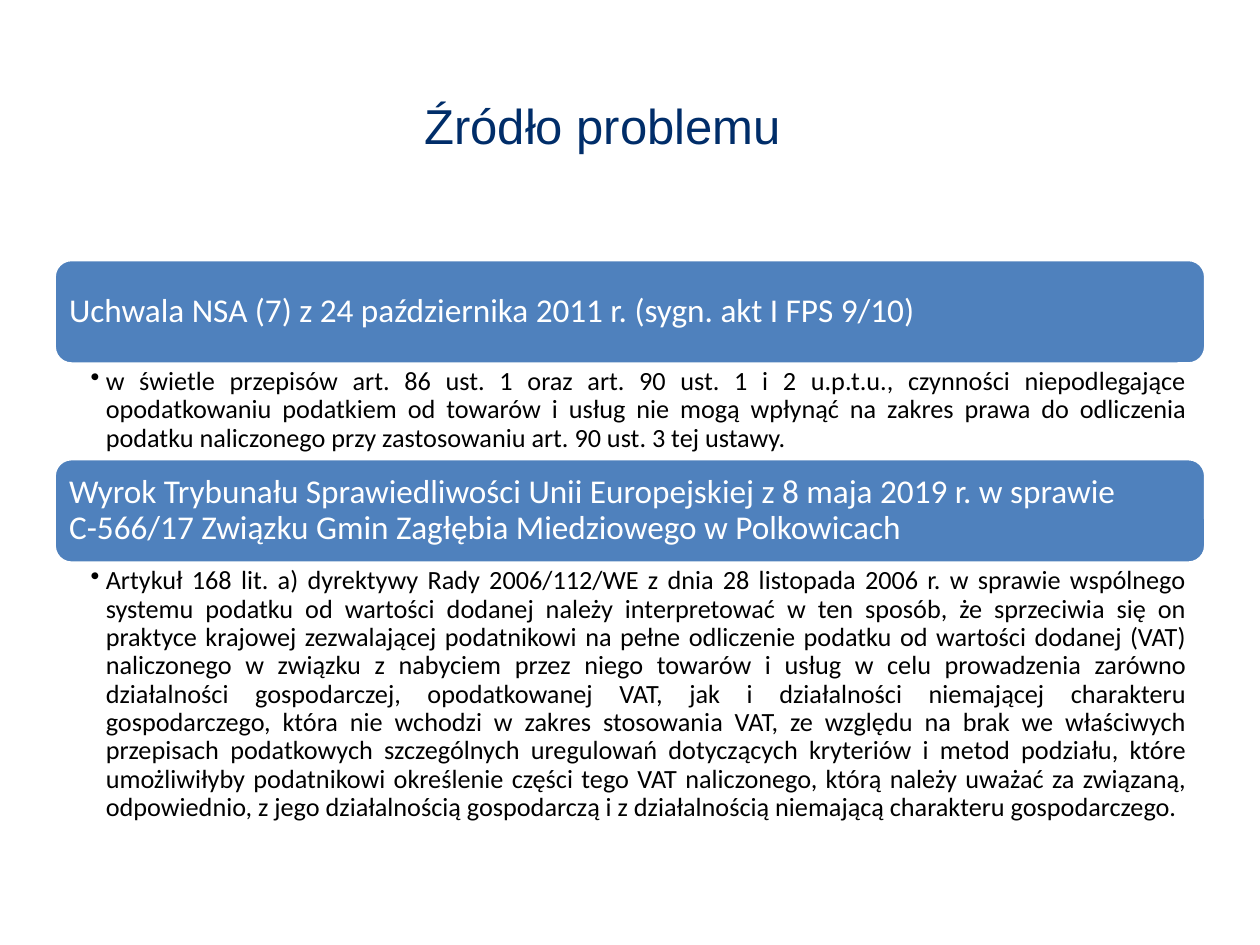
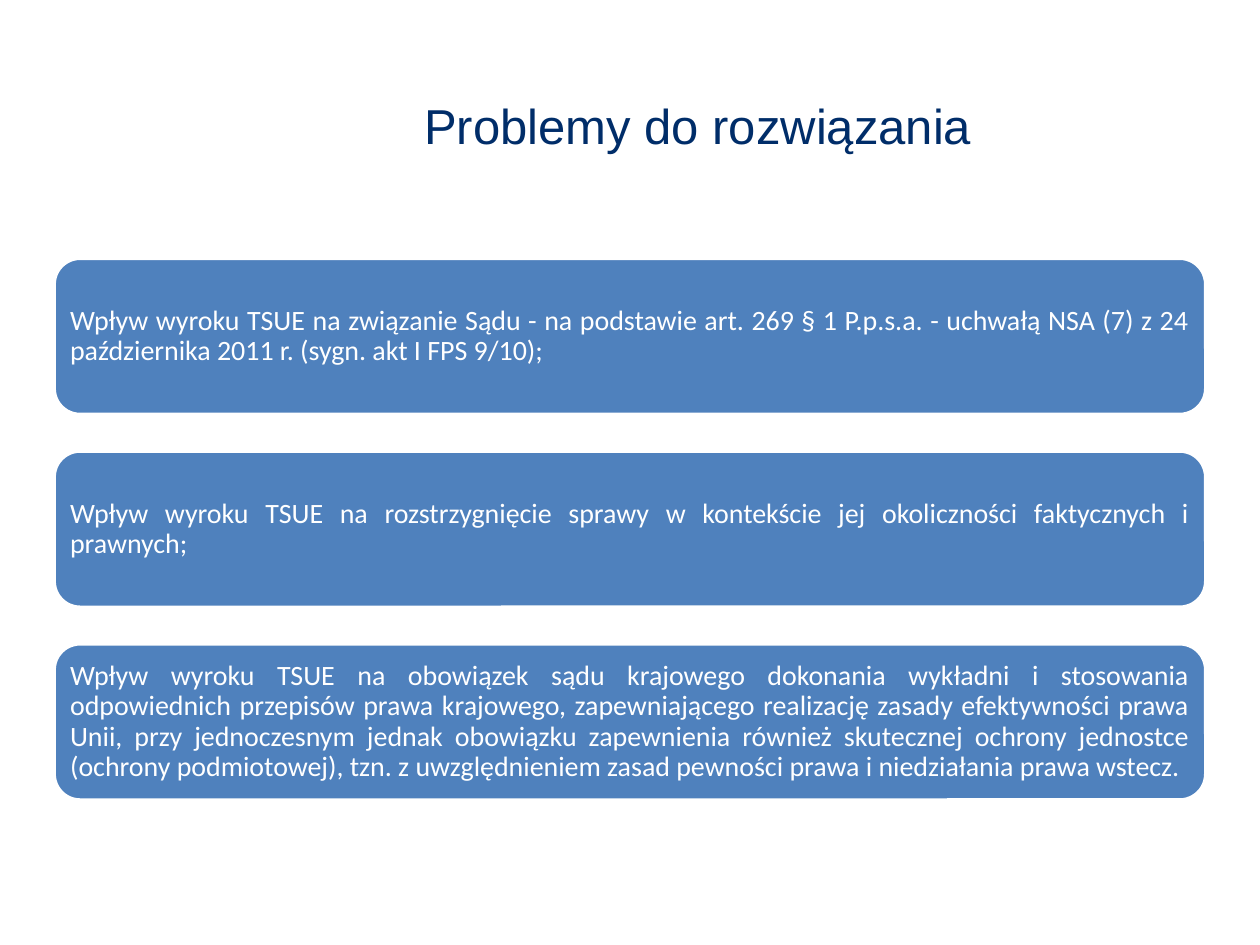
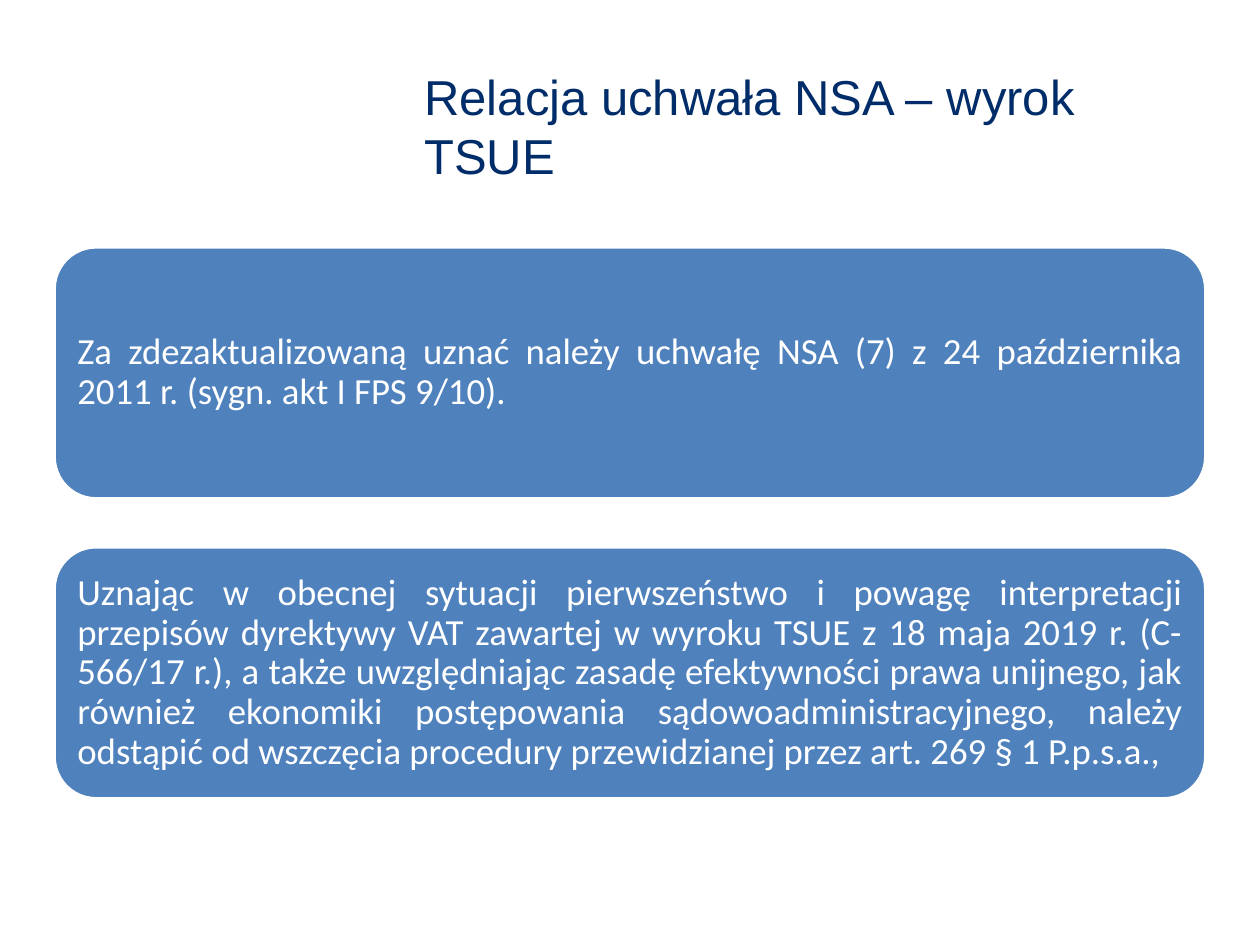
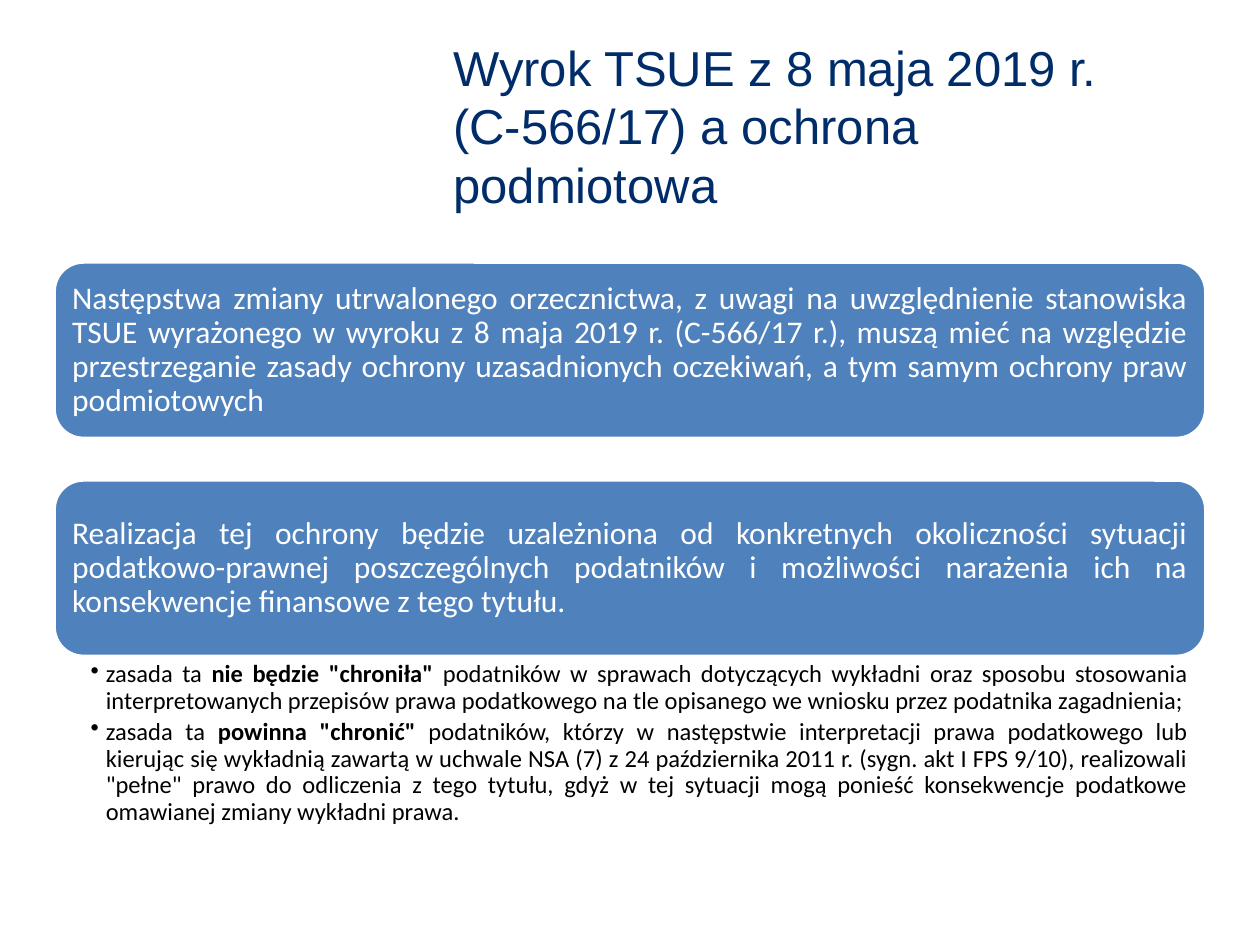
from lxml.etree import SubElement
from pptx import Presentation
from pptx.dml.color import RGBColor
from pptx.enum.shapes import MSO_SHAPE
from pptx.enum.text import MSO_ANCHOR, PP_ALIGN
from pptx.oxml.ns import qn
from pptx.util import Inches, Pt

NAVY, BLUE, WHITE, BLACK = "002D69", "4F81BD", "FFFFFF", "000000"
LEFT, WIDTH = 0.43, 9.14


def color(code):
    return RGBColor.from_string(code)


def style(par, font, size, code, align):
    par.alignment = align
    for run in par.runs:
        run.font.name = font
        run.font.size = Pt(size)
        run.font.color.rgb = color(code)


def pad(frame, left, top, right, base):
    frame.word_wrap = True
    frame.margin_left, frame.margin_top = Inches(left), Inches(top)
    frame.margin_right, frame.margin_bottom = Inches(right), Inches(base)


def add_slide(deck, title, left=3.27):
    """Add a blank slide whose title box runs from left to 9.5 inches."""
    slide = deck.slides.add_slide(deck.slide_layouts[6])
    box = slide.shapes.add_textbox(
        Inches(left), Inches(0.44), Inches(9.5 - left), Inches(1.11))
    frame = box.text_frame
    frame.word_wrap = True
    frame.vertical_anchor = MSO_ANCHOR.MIDDLE
    frame.text = title
    style(frame.paragraphs[0], "Arial", 28, NAVY, PP_ALIGN.LEFT)
    return slide


def add_bar(slide, top, height, size, text, align=PP_ALIGN.JUSTIFY):
    bar = slide.shapes.add_shape(
        MSO_SHAPE.ROUNDED_RECTANGLE,
        Inches(LEFT), Inches(top), Inches(WIDTH), Inches(height))
    bar.shadow.inherit = False
    bar.fill.solid()
    bar.fill.fore_color.rgb = color(BLUE)
    bar.line.color.rgb = color(WHITE)
    bar.line.width = Pt(2)
    frame = bar.text_frame
    pad(frame, *[size / 240] * 4)
    frame.vertical_anchor = MSO_ANCHOR.MIDDLE
    frame.text = text
    par = frame.paragraphs[0]
    par.line_spacing = 0.9
    style(par, "Calibri", size, WHITE, align)


def add_bars(slide, top, height, step, size, texts):
    for row, text in enumerate(texts):
        add_bar(slide, top + row * step, height, size, text)


def add_points(slide, top, height, size, texts):
    """Add a bulleted list; words between asterisks are bold."""
    box = slide.shapes.add_textbox(
        Inches(LEFT), Inches(top), Inches(WIDTH), Inches(height))
    frame = box.text_frame
    pad(frame, 0.29, 0.03, size / 100, 0.03)
    for row, text in enumerate(texts):
        par = frame.add_paragraph() if row else frame.paragraphs[0]
        par.level = 1
        par.line_spacing = 0.9
        par.space_after = Pt(size * 0.2)
        props = par._p.get_or_add_pPr()
        props.set("marL", str(Inches(0.12)))
        props.set("indent", str(-Inches(0.12)))
        SubElement(props, qn("a:buChar")).set("char", "•")
        for part, words in enumerate(text.split("*")):
            run = par.add_run()
            run.text = words
            run.font.bold = part % 2 == 1
        style(par, "Calibri", size, BLACK, PP_ALIGN.JUSTIFY)


def add_source(deck):
    slide = add_slide(deck, "Źródło problemu")
    add_bar(slide, 2.06, 0.83, 19,
            "Uchwala NSA (7) z 24 października 2011 r. (sygn. akt I FPS 9/10)",
            PP_ALIGN.LEFT)
    add_points(slide, 2.89, 0.75, 15, [
        "w świetle przepisów art. 86 ust. 1 oraz art. 90 ust. 1 i 2 u.p.t.u., "
        "czynności niepodlegające opodatkowaniu podatkiem od towarów i usług "
        "nie mogą wpłynąć na zakres prawa do odliczenia podatku naliczonego "
        "przy zastosowaniu art. 90 ust. 3 tej ustawy."])
    add_bar(slide, 3.64, 0.83, 19,
            "Wyrok Trybunału Sprawiedliwości Unii Europejskiej z 8 maja 2019 r. "
            "w sprawie C-566/17 Związku Gmin Zagłębia Miedziowego "
            "w Polkowicach", PP_ALIGN.LEFT)
    thesis = (
        "Artykuł 168 lit. a) dyrektywy Rady 2006/112/WE z dnia 28 listopada "
        "2006 r. w sprawie wspólnego systemu podatku od wartości dodanej "
        "należy interpretować w ten sposób, że sprzeciwia się on praktyce "
        "krajowej zezwalającej podatnikowi na pełne odliczenie podatku od "
        "wartości dodanej (VAT) naliczonego w związku z nabyciem przez niego "
        "towarów i usług w celu prowadzenia zarówno działalności "
        "gospodarczej, opodatkowanej VAT, jak i działalności niemającej "
        "charakteru gospodarczego,")
    reason = (
        "która nie wchodzi w zakres stosowania VAT, "
        "ze względu na brak we właściwych przepisach podatkowych szczególnych "
        "uregulowań dotyczących kryteriów i metod podziału, które "
        "umożliwiłyby podatnikowi określenie części tego VAT naliczonego, "
        "którą należy uważać za związaną, odpowiednio, z jego działalnością "
        "gospodarczą i z działalnością niemającą charakteru gospodarczego.")
    add_points(slide, 4.47, 2.15, 15, [f"{thesis} {reason}"])


def add_issues(deck):
    slide = add_slide(deck, "Problemy do rozwiązania")
    add_bars(slide, 2.05, 1.24, 1.53, 16, [
        "Wpływ wyroku TSUE na związanie Sądu - na podstawie art. 269 § 1 "
        "P.p.s.a. - uchwałą NSA (7) z 24 października 2011 r. "
        "(sygn. akt I FPS 9/10);",
        "Wpływ wyroku TSUE na rozstrzygnięcie sprawy w kontekście jej "
        "okoliczności faktycznych i prawnych;",
        "Wpływ wyroku TSUE na obowiązek sądu krajowego dokonania wykładni "
        "i stosowania odpowiednich przepisów prawa krajowego, zapewniającego "
        "realizację zasady efektywności prawa Unii, przy jednoczesnym jednak "
        "obowiązku zapewnienia również skutecznej ochrony jednostce (ochrony "
        "podmiotowej), tzn. z uwzględnieniem zasad pewności prawa "
        "i niedziałania prawa wstecz."])


def add_ruling(deck):
    slide = add_slide(deck, "Relacja uchwała NSA – wyrok TSUE")
    add_bars(slide, 1.96, 2, 2.38, 21, [
        "Za zdezaktualizowaną uznać należy uchwałę NSA (7) z 24 października "
        "2011 r. (sygn. akt I FPS 9/10).",
        "Uznając w obecnej sytuacji pierwszeństwo i powagę interpretacji "
        "przepisów dyrektywy VAT zawartej w wyroku TSUE z 18 maja 2019 r. "
        "(C- 566/17 r.), a także uwzględniając zasadę efektywności prawa "
        "unijnego, jak również ekonomiki postępowania "
        "sądowoadministracyjnego, należy odstąpić od wszczęcia procedury "
        "przewidzianej przez art. 269 § 1 P.p.s.a.,"])


def add_rights(deck):
    slide = add_slide(
        deck, "Wyrok TSUE z 8 maja 2019 r. (C-566/17) a ochrona podmiotowa",
        3.5)
    add_bars(slide, 2.08, 1.4, 1.73, 18, [
        "Następstwa zmiany utrwalonego orzecznictwa, z uwagi na "
        "uwzględnienie stanowiska TSUE wyrażonego w wyroku z 8 maja 2019 r. "
        "(C-566/17 r.), muszą mieć na względzie przestrzeganie zasady ochrony "
        "uzasadnionych oczekiwań, a tym samym ochrony praw podmiotowych",
        "Realizacja tej ochrony będzie uzależniona od konkretnych "
        "okoliczności sytuacji podatkowo-prawnej poszczególnych podatników "
        "i możliwości narażenia ich na konsekwencje finansowe z tego tytułu."])
    add_points(slide, 5.22, 1.39, 14, [
        'zasada ta *nie będzie "chroniła"* podatników w sprawach dotyczących '
        "wykładni oraz sposobu stosowania interpretowanych przepisów prawa "
        "podatkowego na tle opisanego we wniosku przez podatnika zagadnienia;",
        'zasada ta *powinna "chronić"* podatników, którzy w następstwie '
        "interpretacji prawa podatkowego lub kierując się wykładnią zawartą "
        "w uchwale NSA (7) z 24 października 2011 r. (sygn. akt I FPS 9/10), "
        'realizowali "pełne" prawo do odliczenia z tego tytułu, gdyż w tej '
        "sytuacji mogą ponieść konsekwencje podatkowe omawianej zmiany "
        "wykładni prawa."])


def main():
    deck = Presentation()
    deck.slide_width, deck.slide_height = Inches(10), Inches(7.5)
    add_source(deck)
    add_issues(deck)
    add_ruling(deck)
    add_rights(deck)
    deck.save("out.pptx")


if __name__ == "__main__":
    main()
